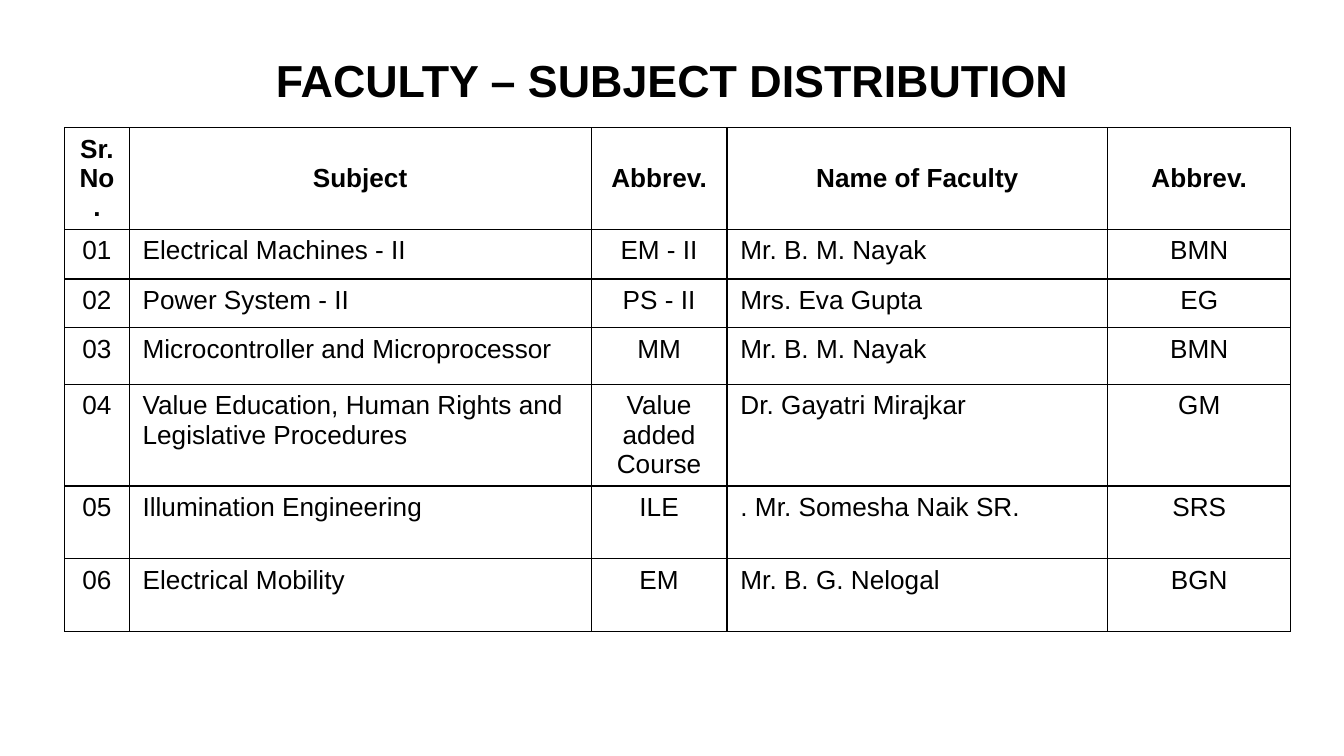
from lxml import etree
from pptx import Presentation
from pptx.dml.color import RGBColor
from pptx.enum.text import MSO_ANCHOR, MSO_AUTO_SIZE, PP_ALIGN
from pptx.oxml.ns import qn
from pptx.util import Pt

LEFT, CENTER = PP_ALIGN.LEFT, PP_ALIGN.CENTER
TOP, MIDDLE = MSO_ANCHOR.TOP, MSO_ANCHOR.MIDDLE

TITLE = "FACULTY – SUBJECT DISTRIBUTION"
HEADER = ("Sr. No.", "Subject", "Abbrev.", "Name of Faculty", "Abbrev.")
SUBJECTS = [
    ("Electrical Machines - II", "EM - II", "Mr. B. M. Nayak", "BMN"),
    ("Power System - II", "PS - II", "Mrs. Eva Gupta", "EG"),
    ("Microcontroller and Microprocessor", "MM", "Mr. B. M. Nayak", "BMN"),
    ("Value Education, Human Rights and Legislative Procedures",
     "Value added Course", "Dr. Gayatri Mirajkar", "GM"),
    ("Illumination Engineering", "ILE", ". Mr. Somesha Naik SR.", "SRS"),
    ("Electrical Mobility", "EM", "Mr. B. G. Nelogal", "BGN"),
]
ROWS = [HEADER] + [(f"{n:02d}", *row) for n, row in enumerate(SUBJECTS, 1)]

THEME = {"font": "Arial", "ink": "000000", "title": 24, "table": 14, "border": 0.75}
SLIDE_W, SLIDE_H = 720, 405
TITLE_BOX = {"left": 0, "top": 18, "width": SLIDE_W, "height": 52.5}
TITLE_INSETS = {"margin_left": 7.2, "margin_top": 10, "margin_right": 7.2, "margin_bottom": 7.2}
TABLE_LEFT, TABLE_TOP = 34.7, 68.4
COL_WIDTHS = (34.5, 247.5, 72.8, 204, 98)
ROW_HEIGHTS = (54.4, 26.6, 26.2, 30.4, 54.4, 39, 39)
COL_ALIGN = (CENTER, LEFT, CENTER, LEFT, CENTER)


def set_lengths(obj, values):
    for name, value in values.items():
        setattr(obj, name, Pt(value))


def write(tf, text, size, bold, align):
    p = tf.paragraphs[0]
    p.alignment = align
    r = p.add_run()
    r.text = text
    formats = {"name": THEME["font"], "size": Pt(size), "bold": bold}
    for name, value in formats.items():
        setattr(r.font, name, value)
    r.font.color.rgb = RGBColor.from_string(THEME["ink"])


def add_borders(cell):
    tc_pr = cell._tc.get_or_add_tcPr()
    for side in ("lnL", "lnR", "lnT", "lnB"):
        ln = etree.SubElement(tc_pr, qn(f"a:{side}"), w=str(Pt(THEME["border"])))
        fill = etree.SubElement(ln, qn("a:solidFill"))
        etree.SubElement(fill, qn("a:srgbClr"), val=THEME["ink"])


def add_title(s):
    sp = s.shapes.title
    set_lengths(sp, TITLE_BOX)
    tf = sp.text_frame
    set_lengths(tf, TITLE_INSETS)
    tf.word_wrap = True
    tf.auto_size = MSO_AUTO_SIZE.NONE
    tf.vertical_anchor = TOP
    write(tf, TITLE, THEME["title"], True, CENTER)


def add_faculty_table(s):
    table = s.shapes.add_table(
        len(ROWS), len(HEADER), Pt(TABLE_LEFT), Pt(TABLE_TOP),
        Pt(sum(COL_WIDTHS)), Pt(sum(ROW_HEIGHTS))).table
    table.horz_banding = False
    for column, width in zip(table.columns, COL_WIDTHS):
        column.width = Pt(width)
    for i, (row, height) in enumerate(zip(ROWS, ROW_HEIGHTS)):
        table.rows[i].height = Pt(height)
        is_header = i == 0
        for j, text in enumerate(row):
            cell = table.cell(i, j)
            cell.vertical_anchor = MIDDLE if is_header else TOP
            add_borders(cell)
            cell.fill.background()
            align = CENTER if is_header else COL_ALIGN[j]
            write(cell.text_frame, text, THEME["table"], is_header, align)


def main():
    prs = Presentation()
    set_lengths(prs, {"slide_width": SLIDE_W, "slide_height": SLIDE_H})
    s = prs.slides.add_slide(prs.slide_layouts[5])
    add_title(s)
    add_faculty_table(s)
    prs.save("out.pptx")


if __name__ == "__main__":
    main()
